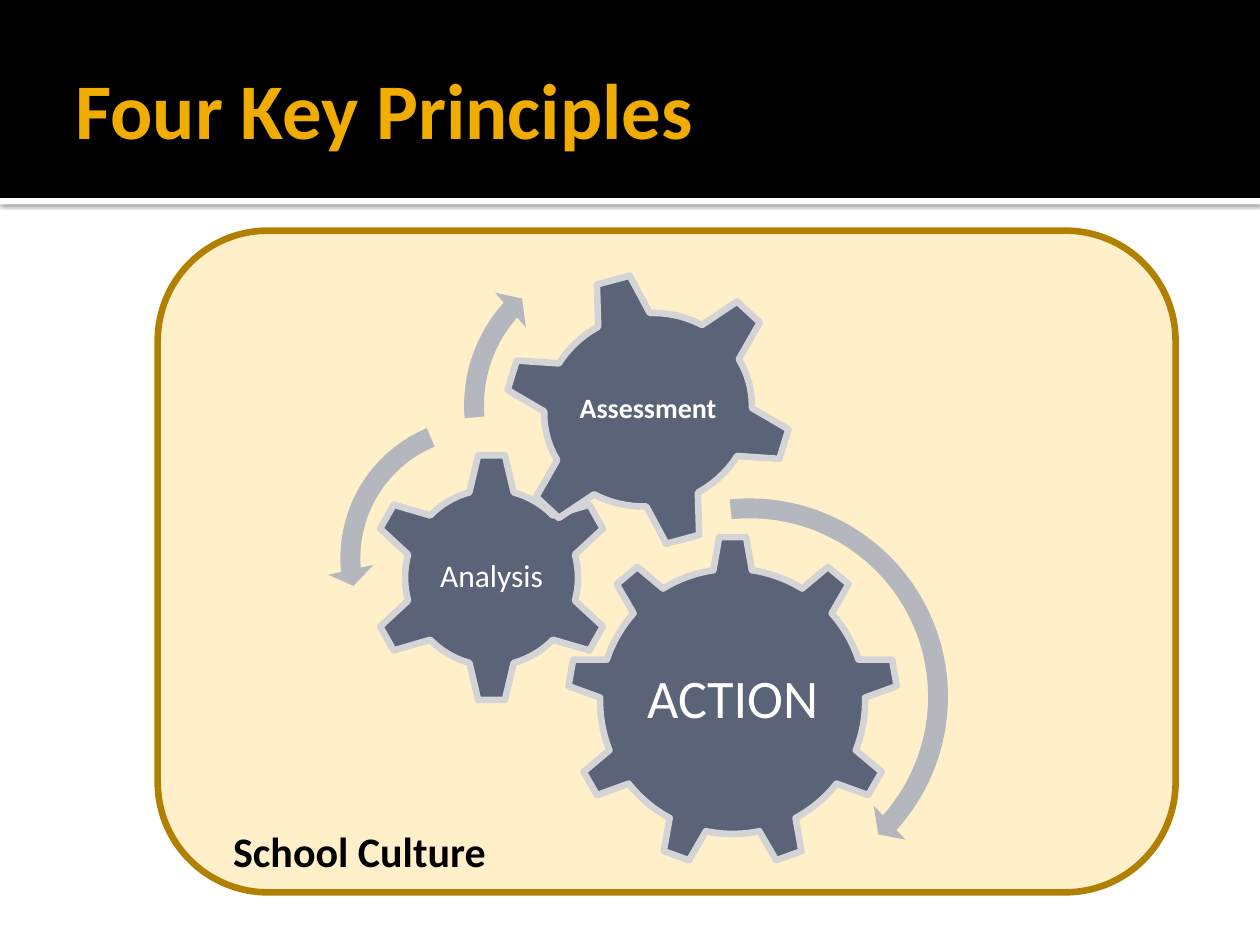
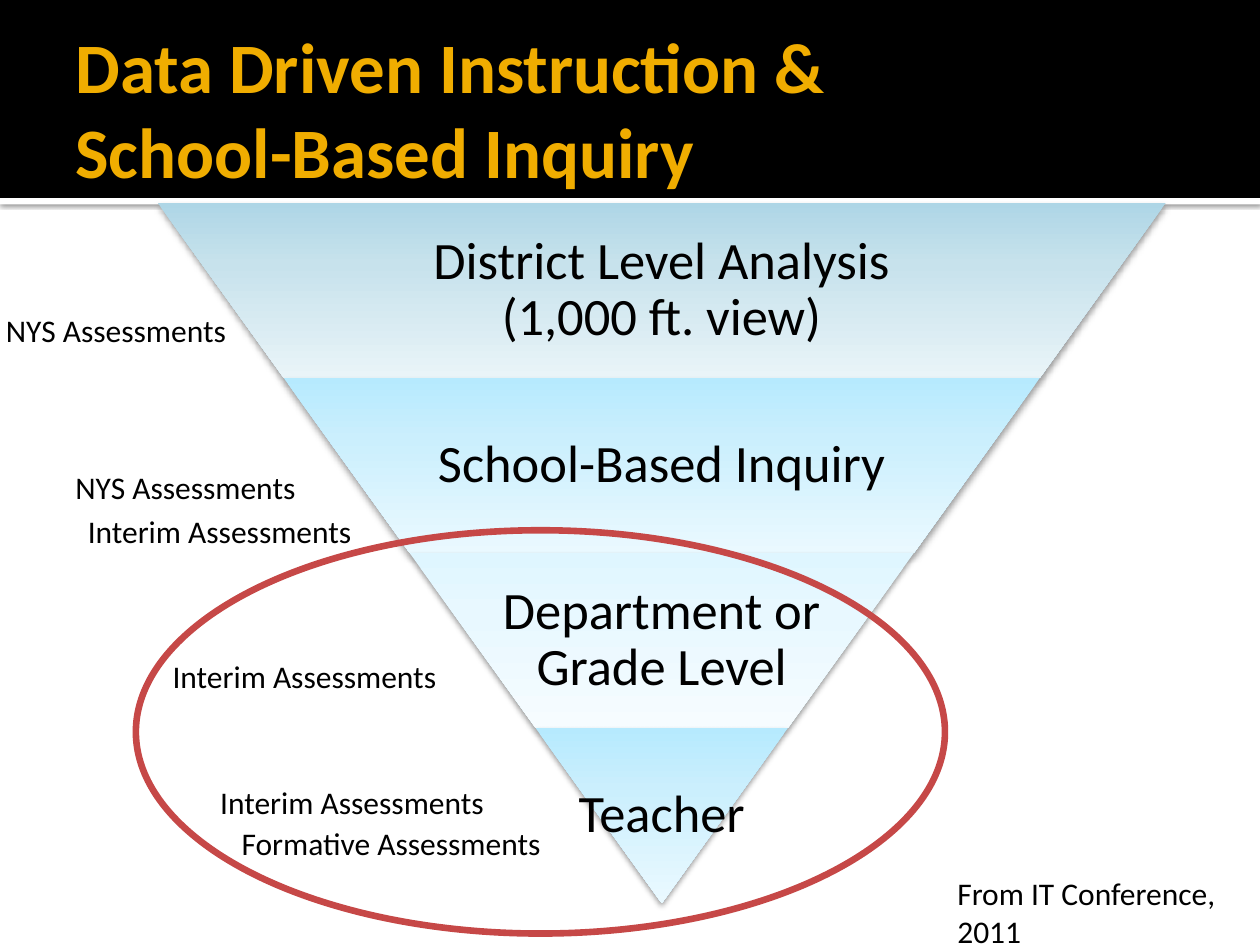
from lxml import etree
from pptx import Presentation
from pptx import util as u
from pptx.dml import color
from pptx.enum import shapes, text
from pptx.oxml import ns

THEME = {
    "font": "Calibri",
    "black": "000000", "white": "FFFFFF", "gold": "F0AD00",
    "panel": "FFF0C9", "panel_edge": "B28000",
    "gear": "5A6378", "gear_edge": "D4D4D6", "arrow": "B5B7BE",
    "ring": "C64847",
    "ice": ("AED6E6", "C7E2EC", "E9F4F8"),
    "sky": ("B6EAFE", "CBEFFD", "EAF9FF"),
    "mist": ("DFF6FF", "E8F8FF", "F6FCFF"),
    "outline": 3.78, "tier_size": 30, "culture_size": 24, "label_size": 18,
}
FORM = shapes.MSO_SHAPE
MIDDLE = text.MSO_ANCHOR.MIDDLE
GROW = text.MSO_AUTO_SIZE.SHAPE_TO_FIT_TEXT


def add_form(page, kind, place, fill=None, edge=None, shadow=None, adjust=(), turn=0):
    """Add a preset shape; fill is a colour, a tuple of gradient colours or None."""
    form = page.shapes.add_shape(kind, *map(u.Cm, place))
    form.rotation = turn
    for index, value in enumerate(adjust):
        form.adjustments[index] = value
    if fill is None:
        form.fill.background()
    elif isinstance(fill, str):
        form.fill.solid()
        form.fill.fore_color.rgb = color.RGBColor.from_string(fill)
    else:
        form.fill.gradient()
        form.fill.gradient_angle = 90
        stops = form._element.spPr.find(".//" + ns.qn("a:gsLst"))
        stops.clear()
        for position, shade in zip((0, 35, 100), fill):
            stop = etree.SubElement(stops, ns.qn("a:gs"), pos=str(position * 1000))
            etree.SubElement(stop, ns.qn("a:srgbClr"), val=shade)
    if edge:
        form.line.color.rgb = color.RGBColor.from_string(edge)
        form.line.width = u.Pt(THEME["outline"])
    else:
        form.line.fill.background()
    form.shadow.inherit = False
    if shadow:
        opacity, blur, distance = shadow
        effects = form._element.spPr.find(ns.qn("a:effectLst"))
        outer = etree.SubElement(
            effects, ns.qn("a:outerShdw"), blurRad=str(u.Pt(blur)),
            dist=str(u.Pt(distance)), dir="5400000", rotWithShape="0")
        tint = etree.SubElement(outer, ns.qn("a:srgbClr"), val=THEME["black"])
        etree.SubElement(tint, ns.qn("a:alpha"), val=str(opacity * 1000))
    return form


def add_words(page, words, place, size, tone="black", bold=False, inset=None,
              para_format=None, **frame_format):
    """Add a text box; each line of the words is parted by a line break."""
    box = page.shapes.add_textbox(*map(u.Cm, place))
    frame = box.text_frame
    settings = {"word_wrap": True, **frame_format}
    if inset:
        sides = ("margin_left", "margin_top", "margin_right", "margin_bottom")
        settings.update(zip(sides, map(u.Cm, inset)))
    for name, value in settings.items():
        setattr(frame, name, value)
    para = frame.paragraphs[0]
    for name, value in (para_format or {}).items():
        setattr(para, name, value)
    for index, line in enumerate(words.split("\n")):
        if index:
            para.add_line_break()
        span = para.add_run()
        span.text = line
        for name, value in {"name": THEME["font"], "size": u.Pt(size), "bold": bold}.items():
            setattr(span.font, name, value)
        span.font.color.rgb = color.RGBColor.from_string(THEME[tone])


CENTRED = {
    "inset": (0.1,) * 4,
    "vertical_anchor": MIDDLE,
    "para_format": {"alignment": text.PP_ALIGN.CENTER, "line_spacing": 0.9},
}

deck = Presentation()
deck.slide_width, deck.slide_height = u.Cm(25.4), u.Cm(19.05)
principles, inquiry = pages = [deck.slides.add_slide(deck.slide_layouts[6]) for _ in range(2)]

# Header band on every page
for page in pages:
    add_form(page, FORM.RECTANGLE, (0, 3.99, 25.4, 0.13), THEME["white"], shadow=(60, 2.5, 0.8))
    add_form(page, FORM.RECTANGLE, (0, 0, 25.4, 3.99), THEME["black"])

# School culture panel
add_form(principles, FORM.ROUNDED_RECTANGLE, (3.18, 4.65, 20.52, 13.34),
         THEME["panel"], THEME["panel_edge"])
add_words(principles, "School Culture", (4.45, 16.51, 6.55, 1.27),
          THEME["culture_size"], bold=True, auto_size=GROW)

# Titles
for page, title, size in (
    (principles, "Four Key Principles", 45),
    (inquiry, "Data Driven Instruction & \nSchool-Based Inquiry", 40.5),
):
    add_words(page, title, (1.27, 0.43, 22.86, 3.48), size, "gold", True,
              (0.25, 0.13, 0.13, 0.13), vertical_anchor=MIDDLE)

# Gears, each with its name centred on it
gears = (
    ("ACTION", FORM.GEAR_9, (11.43, 10.8, 6.68, 6.68), 0, (3.99, 3.43), 31, False),
    ("Analysis", FORM.GEAR_6, (7.42, 9.12, 4.98, 5.05), 0, (2.46, 2.51), 18, False),
    ("Assessment", FORM.GEAR_6, (10.13, 5.49, 5.87, 5.54), 345, (3.25, 3.15), 16, True),
)
for name, kind, place, turn, (width, height), size, bold in gears:
    add_form(principles, kind, place, THEME["gear"], THEME["gear_edge"], turn=turn)
    left = place[0] + (place[2] - width) / 2
    top = place[1] + (place[3] - height) / 2
    add_words(principles, name, (left, top, width, height), size, "white", bold, **CENTRED)

# Turning arrows: thickness and head in percent, angles in degrees
turning_arrows = (
    (FORM.CIRCULAR_ARROW, 10.85, 9.78, 8.53, 4.7, (4.98, 42, 264.21), 5.5),
    (FORM.LEFT_CIRCULAR_ARROW, 6.6, 8.15, 6.2, 6.5, (7.17, 174.82, 247.3), 7.5),
    (FORM.CIRCULAR_ARROW, 9.09, 4.83, 6.68, 6, (6.57, 221.9, 175.14), 7),
)
for kind, left, top, side, thickness, angles, head in turning_arrows:
    adjust = (thickness / 100, *(angle * 0.6 for angle in angles), head / 100)
    add_form(principles, kind, (left, top, side, side), THEME["arrow"], adjust=adjust)

# Inverted pyramid, narrowing by one step on each side per tier
STEP, TIER_HEIGHT = 2.54, 3.53
tiers = (
    ("District Level Analysis\n(1,000 ft. view)", "ice", 0.65),
    ("School-Based Inquiry", "sky", 0.65),
    ("Department or Grade Level", "mist", 0.65),
    ("Teacher", "sky", 1),
)
for index, (name, shades, share) in enumerate(tiers):
    left, top = 3.18 + STEP * index, 4.09 + TIER_HEIGHT * index
    width = 2 * STEP * (len(tiers) - index)
    add_form(inquiry, FORM.TRAPEZOID, (left, top, width, TIER_HEIGHT), THEME[shades],
             shadow=(38, 3.5, 2), adjust=(0.72,), turn=180)
    add_words(inquiry, name, (left + width * (1 - share) / 2, top, width * share, TIER_HEIGHT),
              THEME["tier_size"], **CENTRED)

# Assessments used at each tier
label_widths = {"Interim": 5.87, "Formative": 6.6, "NYS": 4.98}
for kind, left, top in (
    ("Interim", 4.19, 15.67),
    ("Formative", 4.62, 16.48),
    ("Interim", 3.23, 13.13),
    ("Interim", 1.52, 10.19),
    ("NYS", 1.27, 9.32),
    ("NYS", -0.13, 6.15),
):
    add_words(inquiry, f"{kind} Assessments", (left, top, label_widths[kind], 1.02),
              THEME["label_size"], word_wrap=False, auto_size=GROW)

# Credit and highlight ring
add_words(inquiry, "From IT Conference, 2011", (19.05, 17.5, 5.92, 1.8),
          THEME["label_size"], auto_size=GROW)
add_form(inquiry, FORM.OVAL, (2.74, 10.69, 16.31, 8.13), edge=THEME["ring"])

deck.save("out.pptx")
